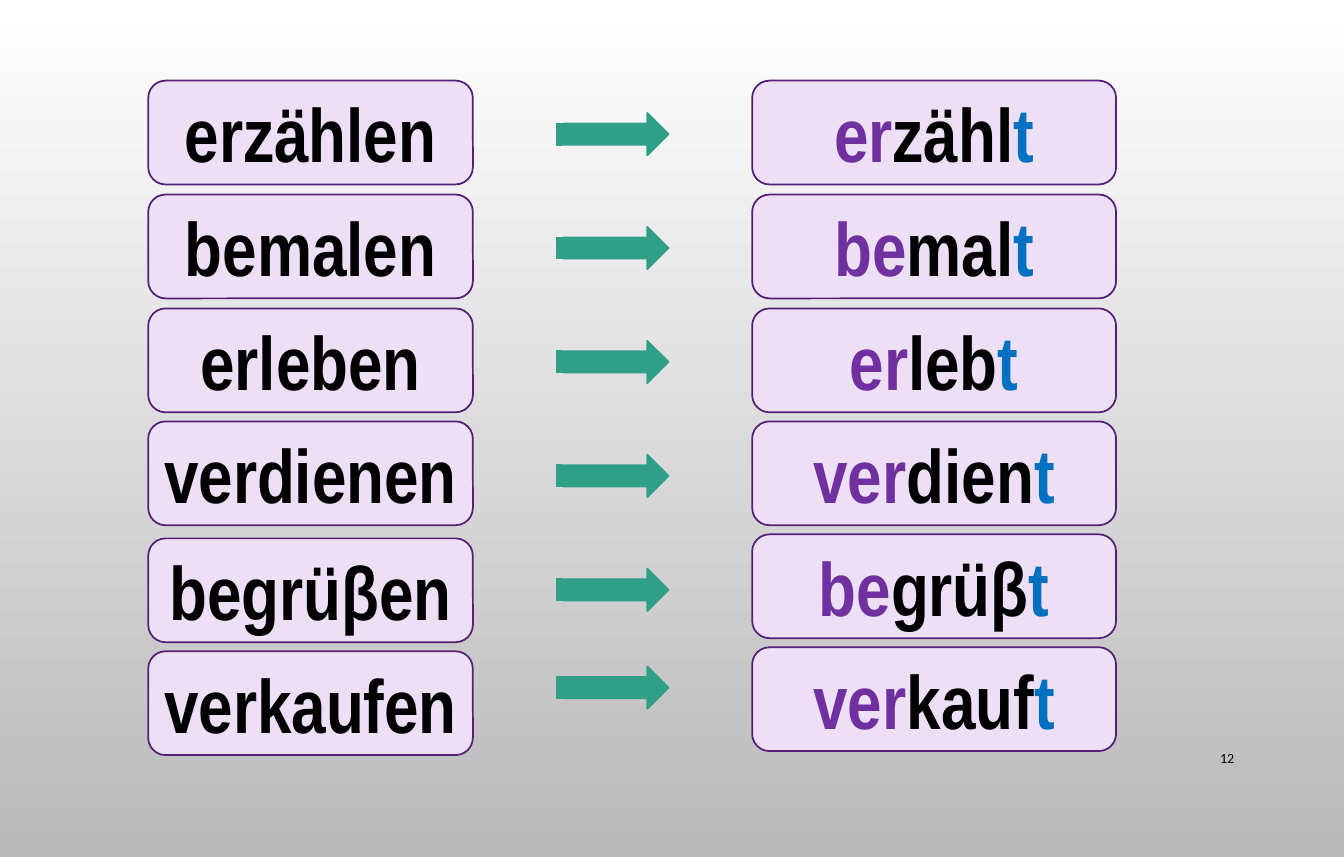
from dataclasses import dataclass

from pptx import Presentation
from pptx.dml.color import RGBColor
from pptx.enum.shapes import MSO_SHAPE
from pptx.enum.text import MSO_ANCHOR, PP_ALIGN
from pptx.util import Emu, Pt

EMU_PER_PX = 9144  # 100 px to the inch


def px(length):
    return Emu(length * EMU_PER_PX)


@dataclass(frozen=True)
class Theme:
    background_top: str = "FFFFFF"
    background_bottom: str = "B9B9B9"
    card_fill: str = "EDDFF6"
    card_line: str = "542176"
    arrow: str = "2FA087"
    text: str = "000000"
    prefix: str = "7030A0"
    ending: str = "0070C0"
    word_font: str = "Arial Narrow"
    number_font: str = "Calibri"
    word_size: int = 54
    number_size: int = 10
    line_width: float = 1.25


class SlideBuilder:
    def __init__(self, slide, theme):
        self.slide = slide
        self.theme = theme

    def background(self):
        fill = self.slide.background.fill
        fill.gradient()
        fill.gradient_angle = 270
        colors = (self.theme.background_top, self.theme.background_bottom)
        for stop, position, color in zip(fill.gradient_stops, (0, 1), colors):
            stop.position = position
            stop.color.rgb = RGBColor.from_string(color)

    def shape(self, kind, box, fill, line):
        shape = self.slide.shapes.add_shape(kind, *map(px, box))
        shape.shadow.inherit = False
        shape.fill.solid()
        shape.fill.fore_color.rgb = RGBColor.from_string(fill)
        shape.line.color.rgb = RGBColor.from_string(line)
        shape.line.width = Pt(self.theme.line_width)
        return shape

    def set_text(self, shape, runs, font_name, size, bold, alignment):
        """Fill the shape with one line made of (text, colour) runs."""
        frame = shape.text_frame
        frame.word_wrap = False
        frame.vertical_anchor = MSO_ANCHOR.MIDDLE
        paragraph = frame.paragraphs[0]
        paragraph.alignment = alignment
        paragraph.font.name = font_name
        paragraph.font.size = Pt(size)
        paragraph.font.bold = bold
        for text, color in runs:
            run = paragraph.add_run()
            run.text = text
            run.font.color.rgb = RGBColor.from_string(color)

    def card(self, box, runs):
        theme = self.theme
        card = self.shape(MSO_SHAPE.ROUNDED_RECTANGLE, box, theme.card_fill, theme.card_line)
        self.set_text(card, runs, theme.word_font, theme.word_size, True, PP_ALIGN.CENTER)

    def arrow(self, box):
        self.shape(MSO_SHAPE.STRIPED_RIGHT_ARROW, box, self.theme.arrow, self.theme.arrow)

    def page_number(self, box, number):
        theme = self.theme
        text_box = self.slide.shapes.add_textbox(*map(px, box))
        self.set_text(text_box, [(number, theme.text)], theme.number_font,
                      theme.number_size, False, PP_ALIGN.RIGHT)
        text_box.text_frame.word_wrap = True


# prefix, stem, then the tops of the infinitive, arrow and participle
VERBS = [
    ("er", "zähl", 80, 112, 80),
    ("be", "mal", 193, 225, 193),
    ("er", "leb", 306, 338, 306),
    ("ver", "dien", 418, 451, 418),
    ("be", "grüβ", 534, 564, 530),
    ("ver", "kauf", 646, 661, 642),
]


def main():
    presentation = Presentation()
    presentation.slide_width = px(1333)
    presentation.slide_height = px(850)
    theme = Theme()
    builder = SlideBuilder(presentation.slides.add_slide(presentation.slide_layouts[6]), theme)
    builder.background()
    for prefix, stem, infinitive_top, arrow_top, participle_top in VERBS:
        builder.card((147, infinitive_top, 322, 103), [(prefix + stem + "en", theme.text)])
        builder.arrow((552, arrow_top, 111, 42))
        builder.card((746, participle_top, 361, 103),
                     [(prefix, theme.prefix), (stem, theme.text), ("t", theme.ending)])
    builder.page_number((1150, 729, 84, 45), "12")
    presentation.save("out.pptx")


if __name__ == "__main__":
    main()
